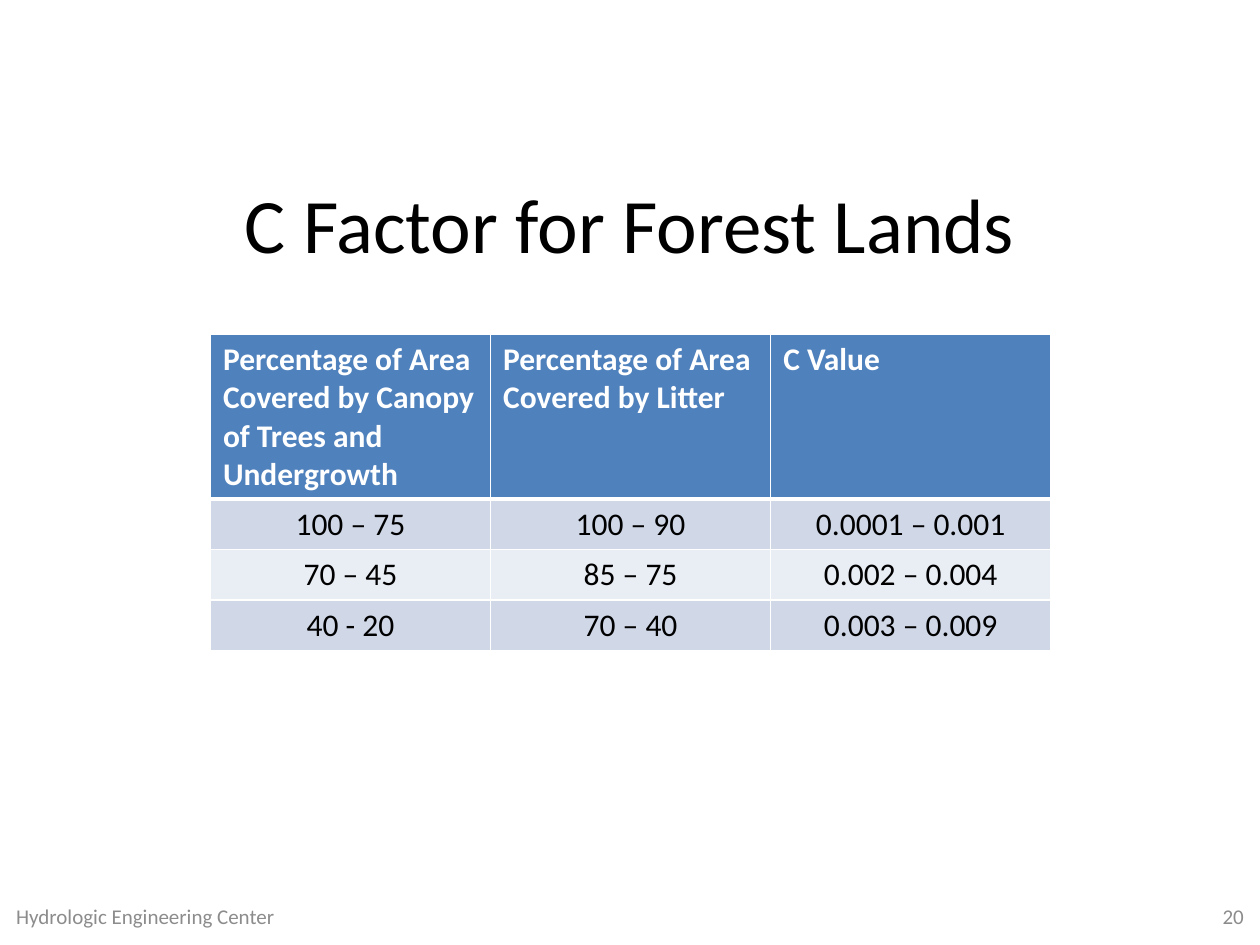
"""Build the slide with the C factor table for forest lands."""
import lxml.etree
import pptx
import pptx.dml.color
import pptx.enum.text
import pptx.oxml.ns
import pptx.util

Inches = pptx.util.Inches
ALIGN = pptx.enum.text.PP_ALIGN
ANCHOR = pptx.enum.text.MSO_ANCHOR

FONT = "Calibri"
BLACK, WHITE, GRAY = "000000", "FFFFFF", "8C8C8C"
HEADER_FILL = "4F81BD"
BAND_FILLS = ["D0D8E8", "E9EDF4"]
ROWS = [
    ["Percentage of Area Covered by Canopy of Trees and Undergrowth",
     "Percentage of Area Covered by Litter", "C Value"],
    ["100 – 75", "100 – 90", "0.0001 – 0.001"],
    ["70 – 45", "85 – 75", "0.002 – 0.004"],
    ["40 - 20", "70 – 40", "0.003 – 0.009"],
]


def rgb(color):
    return pptx.dml.color.RGBColor.from_string(color)


def write_text(text_frame, text, size, color, align, bold=False):
    text_frame.text = text
    paragraph = text_frame.paragraphs[0]
    paragraph.alignment = align
    font = paragraph.runs[0].font
    font.name = FONT
    font.size = pptx.util.Pt(size)
    font.bold = bold
    font.color.rgb = rgb(color)


def add_text(slide, box, text, size, color, align):
    shape = slide.shapes.add_textbox(*map(Inches, box))
    shape.text_frame.word_wrap = True
    shape.text_frame.vertical_anchor = ANCHOR.MIDDLE
    write_text(shape.text_frame, text, size, color, align)


def set_borders(cell, color, widths):
    properties = cell._tc.get_or_add_tcPr()
    for side, width in widths.items():
        line = lxml.etree.SubElement(
            properties, pptx.oxml.ns.qn(f"a:ln{side}"), w=str(pptx.util.Pt(width)))
        fill = lxml.etree.SubElement(line, pptx.oxml.ns.qn("a:solidFill"))
        lxml.etree.SubElement(fill, pptx.oxml.ns.qn("a:srgbClr"), val=color)


def format_cell(cell, text, row):
    header = row == 0
    set_borders(cell, WHITE, {"L": 1, "R": 1, "T": 3 if row == 1 else 1,
                              "B": 3 if header else 1})
    cell.fill.solid()
    cell.fill.fore_color.rgb = rgb(HEADER_FILL if header else BAND_FILLS[(row - 1) % 2])
    write_text(cell.text_frame, text, 18, WHITE if header else BLACK,
               ALIGN.LEFT if header else ALIGN.CENTER, header)


def add_factor_table(slide, box, header_height, row_height):
    frame = slide.shapes.add_table(len(ROWS), len(ROWS[0]), *map(Inches, box))
    table = frame.table
    for row, texts in enumerate(ROWS):
        table.rows[row].height = Inches(row_height if row else header_height)
        for column, text in enumerate(texts):
            format_cell(table.cell(row, column), text, row)


def main():
    presentation = pptx.Presentation()
    presentation.slide_width = Inches(10)
    presentation.slide_height = Inches(7.5)
    slide = presentation.slides.add_slide(presentation.slide_layouts[6])
    add_text(slide, (0.5, 1.14, 9, 1.25), "C Factor for Forest Lands", 44, BLACK, ALIGN.CENTER)
    add_text(slide, (0.03, 7.07, 3.17, 0.4), "Hydrologic Engineering Center", 12, GRAY, ALIGN.LEFT)
    add_text(slide, (7.64, 7.07, 2.33, 0.4), "20", 12, GRAY, ALIGN.RIGHT)
    add_factor_table(slide, (1.67, 2.65, 6.67, 2.52), 1.31, 0.4)
    presentation.save("out.pptx")


if __name__ == "__main__":
    main()
